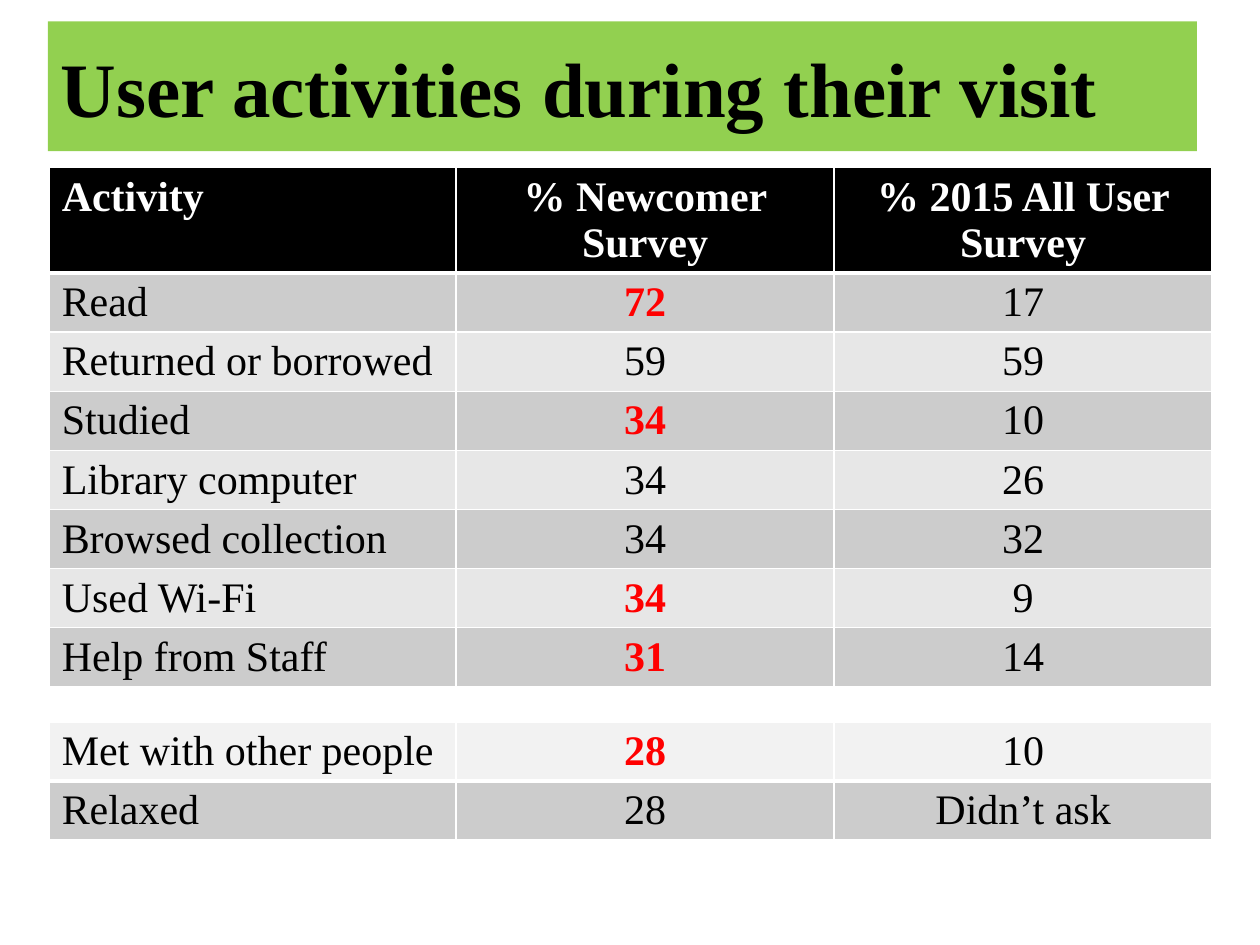
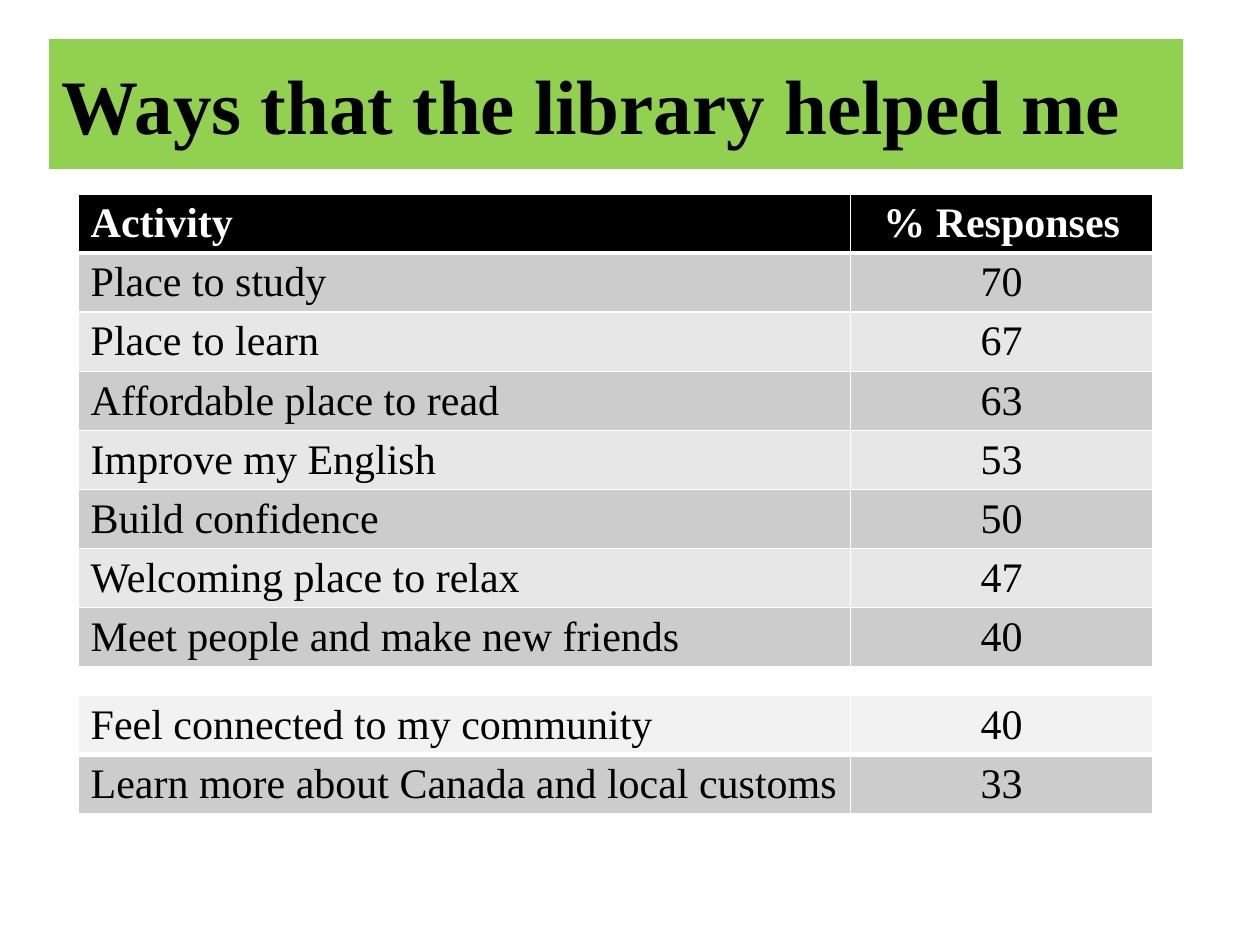
import pptx
import pptx.dml.color
import pptx.enum.text
import pptx.oxml
import pptx.oxml.ns
import pptx.util

Inches = pptx.util.Inches
LEFT = pptx.enum.text.PP_ALIGN.LEFT
CENTER = pptx.enum.text.PP_ALIGN.CENTER
MIDDLE = pptx.enum.text.MSO_ANCHOR.MIDDLE

BLACK, WHITE, RED, GREEN = "000000", "FFFFFF", "FF0000", "92D050"
BAND_DARK, BAND_LIGHT, LEAD_ROW = "CCCCCC", "E7E7E7", "F2F2F2"


def color(code):
    return pptx.dml.color.RGBColor.from_string(code)


def assign(target, values):
    for name, value in values.items():
        setattr(target, name, value)


class SurveyDeck:
    font = "Times New Roman"
    title_size = 44
    table_size = 24
    row_height = 0.41

    def __init__(self):
        self.presentation = pptx.Presentation()
        assign(self.presentation, {"slide_width": Inches(10), "slide_height": Inches(7.5)})
        self.slide = None

    def add_slide(self):
        self.slide = self.presentation.slides.add_slide(self.presentation.slide_layouts[5])

    def add_text(self, frame, text, size, ink, bold, align):
        paragraph = frame.paragraphs[0]
        paragraph.alignment = align
        run = paragraph.add_run()
        run.text = text
        assign(run.font, {"name": self.font, "size": pptx.util.Pt(size), "bold": bold})
        run.font.color.rgb = color(ink)

    def title(self, text, left, top, width):
        heading = self.slide.shapes.title
        assign(heading, {"left": Inches(left), "top": Inches(top),
                         "width": Inches(width), "height": Inches(1.03)})
        heading.fill.solid()
        heading.fill.fore_color.rgb = color(GREEN)
        assign(heading.text_frame, {"word_wrap": True, "vertical_anchor": MIDDLE,
                                    "auto_size": pptx.enum.text.MSO_AUTO_SIZE.NONE})
        self.add_text(heading.text_frame, text, self.title_size, BLACK, True, LEFT)

    def borders(self, cell, row):
        widths = {"L": 1, "R": 1, "T": 3 if row == 1 else 1, "B": 3 if row == 0 else 1}
        properties = cell._tc.get_or_add_tcPr()
        for position, (side, points) in enumerate(widths.items()):
            line = pptx.oxml.parse_xml(
                f'<a:ln{side} {pptx.oxml.ns.nsdecls("a")} w="{pptx.util.Pt(points)}">'
                f'<a:solidFill><a:srgbClr val="{WHITE}"/></a:solidFill></a:ln{side}>')
            properties.insert(position, line)

    def table(self, rows, left, top, height, column_widths, lead_fill, lead_ink, lead_bold):
        frame = self.slide.shapes.add_table(
            len(rows), len(column_widths), Inches(left), Inches(top),
            Inches(sum(column_widths)), Inches(height))
        grid = frame.table
        assign(grid, {"first_row": False, "horz_banding": False})
        for column, width in zip(grid.columns, column_widths):
            column.width = Inches(width)
        for row in grid.rows:
            row.height = Inches(self.row_height)
        frame.height = Inches(height)

        for r, values in enumerate(rows):
            band = lead_fill if r == 0 else BAND_DARK if r % 2 else BAND_LIGHT
            for c, value in enumerate(values):
                cell = grid.cell(r, c)
                cell.fill.solid()
                cell.fill.fore_color.rgb = color(band)
                self.borders(cell, r)
                ink, bold = (lead_ink, lead_bold) if r == 0 else (BLACK, False)
                if c == 1 and newcomers_stand_out(values):
                    ink, bold = RED, True
                self.add_text(cell.text_frame, str(value), self.table_size, ink, bold,
                              CENTER if c else LEFT)

    def split_table(self, rows, tail_rows, left, tops, heights, column_widths):
        self.table(rows, left, tops[0], heights[0], column_widths, BLACK, WHITE, True)
        self.table(tail_rows, left, tops[1], heights[1], column_widths, LEAD_ROW, BLACK, False)


def newcomers_stand_out(values):
    shares = values[1:]
    return (len(shares) == 2 and all(isinstance(share, int) for share in shares)
            and shares[0] > 2 * shares[1])


def main():
    deck = SurveyDeck()

    deck.add_slide()
    deck.title("User activities during their visit", 0.38, 0.17, 9.12)
    activities = [
        ("Activity", "% Newcomer Survey", "% 2015 All User Survey"),
        ("Read", 72, 17),
        ("Returned or borrowed", 59, 59),
        ("Studied", 34, 10),
        ("Library computer", 34, 26),
        ("Browsed collection", 34, 32),
        ("Used Wi-Fi", 34, 9),
        ("Help from Staff", 31, 14),
    ]
    social_activities = [("Met with other people", 28, 10), ("Relaxed", 28, "Didn’t ask")]
    deck.split_table(activities, social_activities, 0.39, (1.33, 5.73), (4.4, 1), (3.23, 3, 3))

    deck.add_slide()
    deck.title("Ways that the library helped me", 0.39, 0.31, 9)
    benefits = [
        ("Activity", "% Responses"),
        ("Place to study", 70),
        ("Place to learn", 67),
        ("Affordable place to read", 63),
        ("Improve my English", 53),
        ("Build confidence", 50),
        ("Welcoming place to relax", 47),
        ("Meet people and make new friends", 40),
    ]
    community_benefits = [
        ("Feel connected to my community", 40),
        ("Learn more about Canada and local customs", 33),
    ]
    deck.split_table(benefits, community_benefits, 0.62, (1.54, 5.52), (4, 1), (6.13, 2.4))

    deck.presentation.save("out.pptx")


if __name__ == "__main__":
    main()
